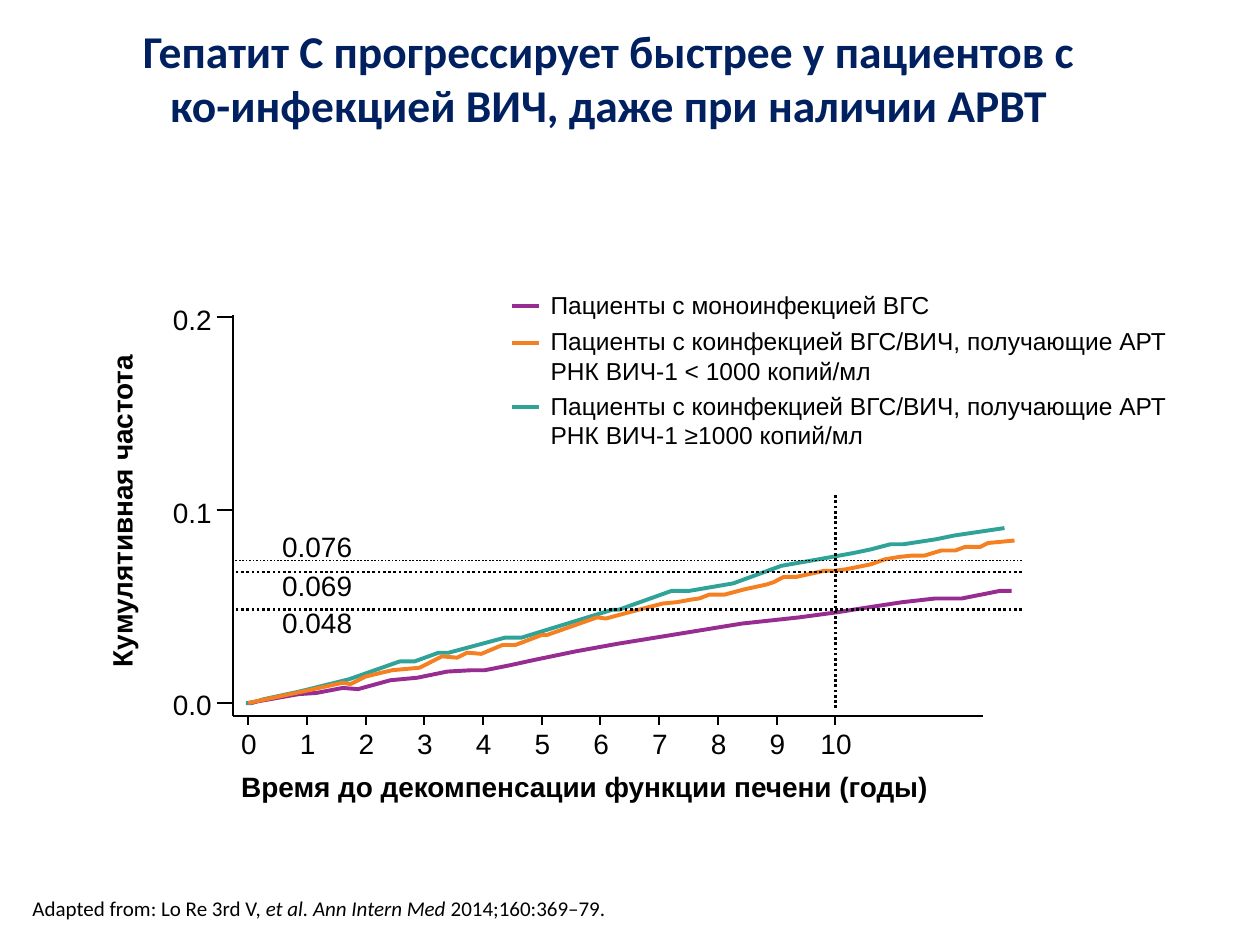
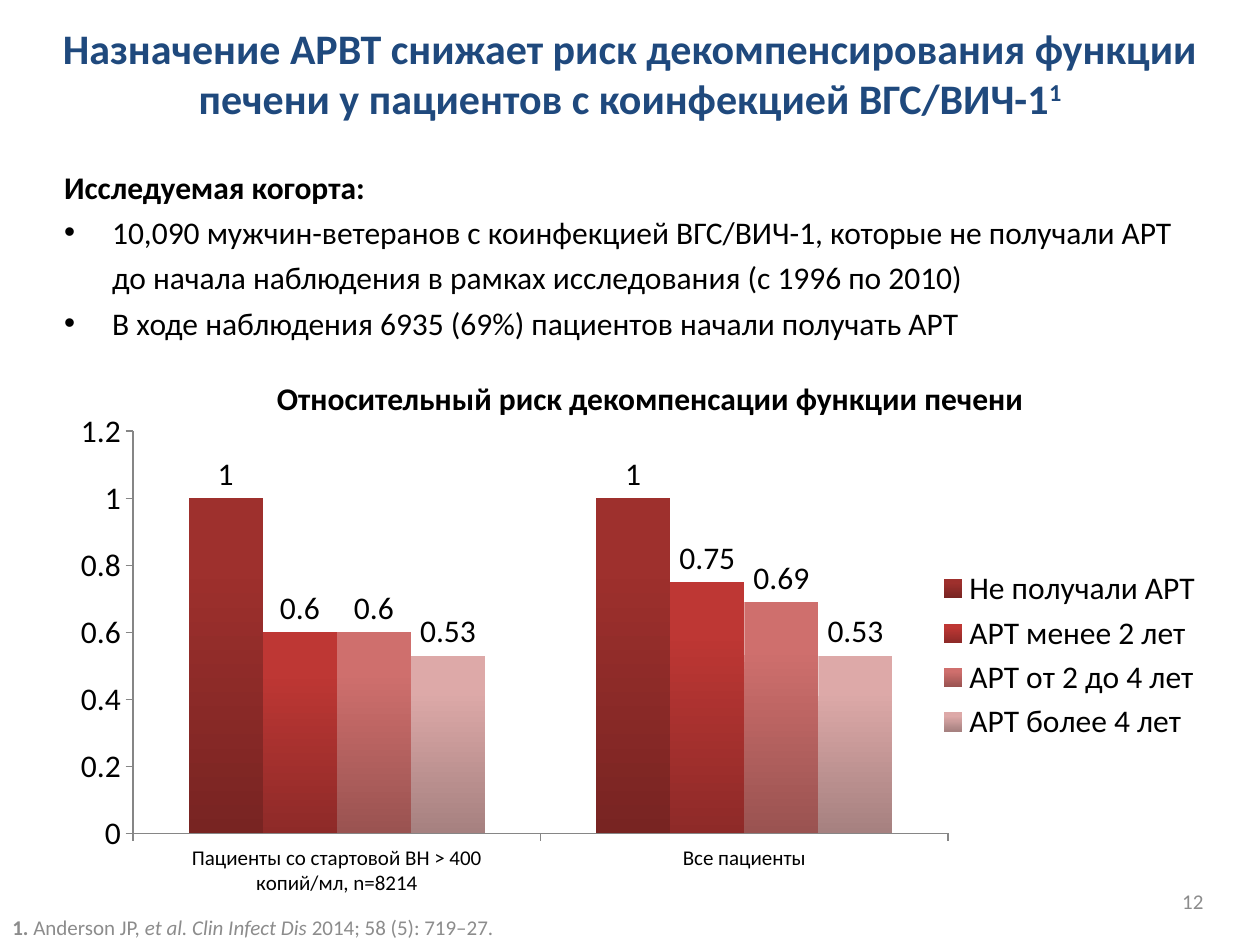
from dataclasses import dataclass

from lxml import etree
from pptx import Presentation
from pptx.chart import data as chart_data
from pptx.dml import color as dml_color
from pptx.enum import chart as chart_enum, dml, shapes, text
from pptx.oxml import ns
from pptx.util import Inches, Pt

COLORS = {
    "black": "000000", "navy": "002060", "blue": "1F497D", "note": "8C8C8C", "axis": "868686",
    "mono": "972C91", "suppressed": "F48021", "viremic": "30A399",
    "untreated": "9E302D", "untreated_dark": "782422",
    "short": "BE3734", "short_dark": "8E2A28",
    "medium": "CF6F6D", "medium_dark": "9A5351",
    "long": "DDA9A8", "long_dark": "A68180",
}
LEFT, CENTER, RIGHT = text.PP_ALIGN.LEFT, text.PP_ALIGN.CENTER, text.PP_ALIGN.RIGHT
MIDDLE = text.MSO_ANCHOR.MIDDLE

AXIS_LEFT, AXIS_RIGHT, AXIS_TOP, AXIS_BOTTOM = 1.85, 7.8, 2.5, 5.68
ORIGIN_X, ORIGIN_Y = 1.97, 5.58
LAST_YEAR, LAST_YEAR_X = 10, 6.63
TOP_PERCENT, TOP_PERCENT_Y = 20, 2.52
LABEL_HEIGHT = 0.27


@dataclass
class Cohort:
    legend: str
    legend_width: float
    percent_by_year: list


COINFECTED = "Пациенты с коинфекцией ВГС/ВИЧ, получающие АРТ"
COHORTS = {
    "mono": Cohort("Пациенты с моноинфекцией ВГС", 3.03, [
        (0, 0), (0.86, 0.46), (1.16, 0.52), (1.61, 0.78), (1.87, 0.72), (2.42, 1.18),
        (2.88, 1.31), (3.39, 1.63), (3.8, 1.7), (4.03, 1.7), (4.46, 1.96), (4.85, 2.22),
        (5.58, 2.68), (6.29, 3.07), (8.41, 4.12), (9.38, 4.44), (10.04, 4.71), (10.43, 4.9),
        (11.14, 5.23), (11.7, 5.42), (12.15, 5.42), (12.38, 5.56), (12.81, 5.82), (13, 5.82)]),
    "suppressed": Cohort(f"{COINFECTED}\nРНК ВИЧ-1 < 1000 копий/мл", 4.98, [
        (0, 0), (1.01, 0.65), (1.61, 1.05), (1.74, 0.98), (2, 1.37), (2.27, 1.57),
        (2.45, 1.7), (2.92, 1.83), (3.3, 2.42), (3.56, 2.35), (3.73, 2.61), (3.97, 2.55),
        (4.33, 3.01), (4.55, 3.01), (5, 3.53), (5.09, 3.53), (5.94, 4.44), (6.09, 4.38),
        (6.33, 4.58), (6.65, 4.84), (7.06, 5.16), (7.3, 5.23), (7.53, 5.36), (7.68, 5.42),
        (7.85, 5.62), (8.11, 5.62), (8.43, 5.88), (8.82, 6.14), (8.95, 6.27), (9.12, 6.54),
        (9.33, 6.54), (9.53, 6.67), (9.81, 6.86), (9.98, 6.86), (10.17, 6.93), (10.6, 7.19),
        (10.84, 7.45), (11.09, 7.58), (11.31, 7.65), (11.52, 7.65), (11.8, 7.91),
        (12.04, 7.91), (12.21, 8.1), (12.47, 8.1), (12.6, 8.3), (13.05, 8.43)]),
    "viremic": Cohort(f"{COINFECTED}\nРНК ВИЧ-1 ≥1000 копий/мл", 4.98, [
        (-0.04, 0), (0.06, 0), (0.26, 0.2), (0.86, 0.59), (1.72, 1.24), (2.58, 2.16),
        (2.83, 2.16), (3.24, 2.61), (3.41, 2.61), (4.38, 3.4), (4.66, 3.4), (6.2, 4.84),
        (6.31, 4.84), (7.21, 5.82), (7.51, 5.82), (8.26, 6.21), (9.08, 7.12), (9.7, 7.45),
        (10.3, 7.78), (10.6, 7.97), (10.94, 8.24), (11.16, 8.24), (11.72, 8.5),
        (12.02, 8.69), (12.88, 9.08)]),
}
BACK_TO_FRONT = ["viremic", "mono", "suppressed"]

ABOVE_LINE, BELOW_LINE = -0.25, -0.03
TEN_YEAR_RATES = [
    ("0.076", 7.39, ABOVE_LINE, 1),
    ("0.069", 6.8, BELOW_LINE, 1.5),
    ("0.048", 4.84, BELOW_LINE, 1.5),
]

RISK_CATEGORIES = ["Пациенты со стартовой ВН > 400 копий/мл, n=8214", "Все пациенты"]
RISK_BY_THERAPY = [
    ("Не получали АРТ", (1, 1), "untreated"),
    ("АРТ менее 2 лет", (0.6, 0.75), "short"),
    ("АРТ от 2 до 4 лет", (0.6, 0.69), "medium"),
    ("АРТ более 4 лет", (0.53, 0.53), "long"),
]


def year_x(year):
    return ORIGIN_X + year * (LAST_YEAR_X - ORIGIN_X) / LAST_YEAR


def percent_y(percent):
    return ORIGIN_Y - percent * (ORIGIN_Y - TOP_PERCENT_Y) / TOP_PERCENT


def rgb(name):
    return dml_color.RGBColor.from_string(COLORS[name])


def style_font(font, size, color="black", name="Calibri", bold=False, italic=False):
    font.size, font.name, font.bold, font.italic = Pt(size), name, bold, italic
    font.color.rgb = rgb(color)


def place(shape, left, top, width, height):
    shape.left, shape.top = Inches(left), Inches(top)
    shape.width, shape.height = Inches(width), Inches(height)


def set_title(slide, box, title, size, color, superscript=None):
    shape = slide.shapes.title
    place(shape, *box)
    frame = shape.text_frame
    frame.text = title
    frame.word_wrap = True
    frame.vertical_anchor = MIDDLE
    paragraph = frame.paragraphs[0]
    paragraph.alignment = CENTER
    if superscript:
        run = paragraph.add_run()
        run.text = superscript
        run.font._element.set("baseline", "30000")
    for run in paragraph.runs:
        style_font(run.font, size, color, bold=True)


def add_text(slide, box, parts, size=12, color="black", align=LEFT):
    frame = slide.shapes.add_textbox(*map(Inches, box)).text_frame
    frame.word_wrap = True
    frame.vertical_anchor = MIDDLE
    paragraph = frame.paragraphs[0]
    paragraph.alignment = align
    for content, style in parts:
        run = paragraph.add_run()
        run.text = content
        style_font(run.font, size, color, **style)
    return paragraph


def add_label(slide, left, top, width, content, size=16, align=LEFT, bold=False):
    shape = slide.shapes.add_textbox(*map(Inches, (left, top, width, LABEL_HEIGHT)))
    frame = shape.text_frame
    frame.margin_left = frame.margin_top = frame.margin_right = frame.margin_bottom = 0
    frame.word_wrap = False
    frame.text = content
    for paragraph in frame.paragraphs:
        paragraph.alignment = align
        for run in paragraph.runs:
            style_font(run.font, size, name="Arial", bold=bold)
    return shape


def add_line(slide, start, end, color="black", width=1.13, dotted=False):
    points = map(Inches, (*start, *end))
    connector = slide.shapes.add_connector(shapes.MSO_CONNECTOR.STRAIGHT, *points)
    connector.line.color.rgb = rgb(color)
    connector.line.width = Pt(width)
    if dotted:
        connector.line.dash_style = dml.MSO_LINE.ROUND_DOT
    etree.SubElement(connector._element.spPr, ns.qn("a:effectLst"))


def add_curve(slide, percent_by_year, color):
    first, *rest = [(Inches(year_x(year)), Inches(percent_y(percent)))
                    for year, percent in percent_by_year]
    builder = slide.shapes.build_freeform(*first)
    builder.add_line_segments(rest, close=False)
    shape = builder.convert_to_shape()
    shape.fill.background()
    shape.line.color.rgb = rgb(color)
    shape.line.width = Pt(2.25)
    shape.shadow.inherit = False


def add_curve_legend(slide):
    top = 2.3
    for color, cohort in COHORTS.items():
        key_y = top + 0.13
        add_line(slide, (4.06, key_y), (4.28, key_y), color, 2.25)
        add_label(slide, 4.37, top, cohort.legend_width, cohort.legend, 14)
        line_count = len(cohort.legend.split("\n"))
        top += 0.22 * line_count + 0.07


def add_axes(slide):
    add_line(slide, (AXIS_LEFT, AXIS_TOP), (AXIS_LEFT, AXIS_BOTTOM))
    add_line(slide, (AXIS_LEFT, AXIS_BOTTOM), (AXIS_RIGHT, AXIS_BOTTOM))
    for percent in range(0, TOP_PERCENT + 1, 10):
        y = percent_y(percent)
        add_line(slide, (AXIS_LEFT - 0.13, y), (AXIS_LEFT, y))
        add_label(slide, 1.37, y - 0.12, 0.31, f"{percent / 100:.1f}", align=RIGHT)
    for year in range(LAST_YEAR + 1):
        x = year_x(year)
        add_line(slide, (x, AXIS_BOTTOM), (x, AXIS_BOTTOM + 0.07))
        add_label(slide, x - 0.12, 5.77, 0.25, str(year), align=CENTER)
    add_label(slide, 1.88, 6.11, 5.52, "Время до декомпенсации функции печени (годы)",
              align=CENTER, bold=True)
    rate_title = add_label(slide, -0.29, 3.92, 2.51, "Кумулятивная частота",
                           align=CENTER, bold=True)
    rate_title.rotation = 270


def add_ten_year_rates(slide):
    x = year_x(LAST_YEAR)
    add_line(slide, (x, 5.62), (x, 3.93), width=1.5, dotted=True)
    for rate, percent, label_offset, width in TEN_YEAR_RATES:
        y = percent_y(percent)
        add_label(slide, 2.24, y + label_offset, 0.56, rate)
        add_line(slide, (8.11, y), (AXIS_LEFT, y), width=width, dotted=True)


def fill_cohort(slide, heading, points):
    body = slide.placeholders[1]
    place(body, 0.41, 1.22, 9.24, 1.82)
    frame = body.text_frame
    frame.text = "\n".join([heading, *points])
    for index, paragraph in enumerate(frame.paragraphs):
        is_heading = index == 0
        paragraph.line_spacing = 1.2
        paragraph.space_before = Pt(0)
        properties = paragraph._p.get_or_add_pPr()
        properties.set("marL", str(Inches(0.38)))
        properties.set("indent", str(-Inches(0.38)))
        if is_heading:
            etree.SubElement(properties, ns.qn("a:buNone"))
        else:
            etree.SubElement(properties, ns.qn("a:buChar")).set("char", "•")
        for run in paragraph.runs:
            style_font(run.font, 18, bold=is_heading)


def set_plot_layout(chart, x, y, width, height):
    plot_area = chart._chartSpace.chart.plotArea
    for existing in plot_area.findall(ns.qn("c:layout")):
        plot_area.remove(existing)
    layout = etree.Element(ns.qn("c:layout"))
    manual = etree.SubElement(layout, ns.qn("c:manualLayout"))
    settings = [("layoutTarget", "inner"), ("xMode", "edge"), ("yMode", "edge"),
                ("x", x), ("y", y), ("w", width), ("h", height)]
    for tag, value in settings:
        etree.SubElement(manual, ns.qn(f"c:{tag}")).set("val", str(value))
    plot_area.insert(0, layout)


def fill_bars(series, color):
    fill = series.format.fill
    fill.gradient()
    fill.gradient_angle = 270
    light, dark = fill.gradient_stops
    light.color.rgb, light.position = rgb(color), 0.2
    dark.color.rgb, dark.position = rgb(f"{color}_dark"), 1


def add_risk_chart(slide):
    data = chart_data.CategoryChartData()
    data.categories = RISK_CATEGORIES
    for therapy, risks, _ in RISK_BY_THERAPY:
        data.add_series(therapy, risks)
    box = map(Inches, (0.41, 3.18, 9.24, 4.04))
    chart = slide.shapes.add_chart(chart_enum.XL_CHART_TYPE.COLUMN_CLUSTERED, *box, data).chart
    style_font(chart.font, 18)
    chart.has_title = False
    chart.has_legend = True
    chart.legend.position = chart_enum.XL_LEGEND_POSITION.RIGHT
    chart.legend.include_in_layout = False
    set_plot_layout(chart, 0.07, 0.06, 0.7, 0.79)
    for axis in (chart.category_axis, chart.value_axis):
        axis.has_major_gridlines = False
        axis.major_tick_mark = chart_enum.XL_TICK_MARK.OUTSIDE
        axis.format.line.color.rgb = rgb("axis")
    style_font(chart.category_axis.tick_labels.font, 12)
    chart.value_axis.minimum_scale, chart.value_axis.maximum_scale = 0, 1.2
    chart.value_axis.major_unit = 0.2
    plot = chart.plots[0]
    plot.gap_width, plot.overlap = 150, 0
    plot.vary_by_categories = False
    plot.has_data_labels = True
    plot.data_labels.show_value = True
    plot.data_labels.position = chart_enum.XL_LABEL_POSITION.OUTSIDE_END
    for series, (_, _, color) in zip(plot.series, RISK_BY_THERAPY):
        fill_bars(series, color)


def build_progression_slide(presentation):
    slide = presentation.slides.add_slide(presentation.slide_layouts[5])
    set_title(slide, (0.86, -0.01, 7.95, 1.25),
              "Гепатит С прогрессирует быстрее у пациентов с ко-инфекцией ВИЧ, даже при наличии АРВТ",
              26, "navy")
    add_text(slide, (0.16, 7.01, 7.8, 0.4), [
        ("Adapted from: Lo Re 3rd V, ", {}), ("et al. Ann Intern Med ", {"italic": True}),
        ("2014;160:369–79.", {})])
    add_curve_legend(slide)
    add_axes(slide)
    for color in BACK_TO_FRONT:
        add_curve(slide, COHORTS[color].percent_by_year, color)
    add_ten_year_rates(slide)


def build_risk_slide(presentation):
    slide = presentation.slides.add_slide(presentation.slide_layouts[1])
    set_title(slide, (0, -0.05, 10, 1.25),
              "Назначение АРВТ снижает риск декомпенсирования функции печени "
              "у пациентов с коинфекцией ВГС/ВИЧ-1", 24, "blue", superscript="1")
    fill_cohort(slide, "Исследуемая когорта:", [
        "10,090 мужчин-ветеранов с коинфекцией ВГС/ВИЧ-1, которые не получали АРТ "
        "до начала наблюдения в рамках исследования (с 1996 по 2010)",
        "В ходе наблюдения 6935 (69%) пациентов начали получать АРТ"])
    add_text(slide, (0, 7.21, 7.8, 0.29), [
        ("1. ", {"bold": True}), ("Anderson JP, ", {}),
        ("et al. Clin Infect Dis", {"italic": True}), (" 2014; 58 (5): 719–27.", {})], color="note")
    add_text(slide, (7.32, 6.95, 2.33, 0.4), [("12", {})], color="note", align=RIGHT)
    add_risk_chart(slide)
    heading = [("Относительный риск декомпенсации функции печени", {"bold": True})]
    add_text(slide, (1.82, 2.99, 6.68, 0.37), heading, 18, align=CENTER).line_spacing = 0.9


def main():
    presentation = Presentation()
    presentation.slide_width, presentation.slide_height = Inches(10), Inches(7.5)
    build_progression_slide(presentation)
    build_risk_slide(presentation)
    presentation.save("out.pptx")


if __name__ == "__main__":
    main()
